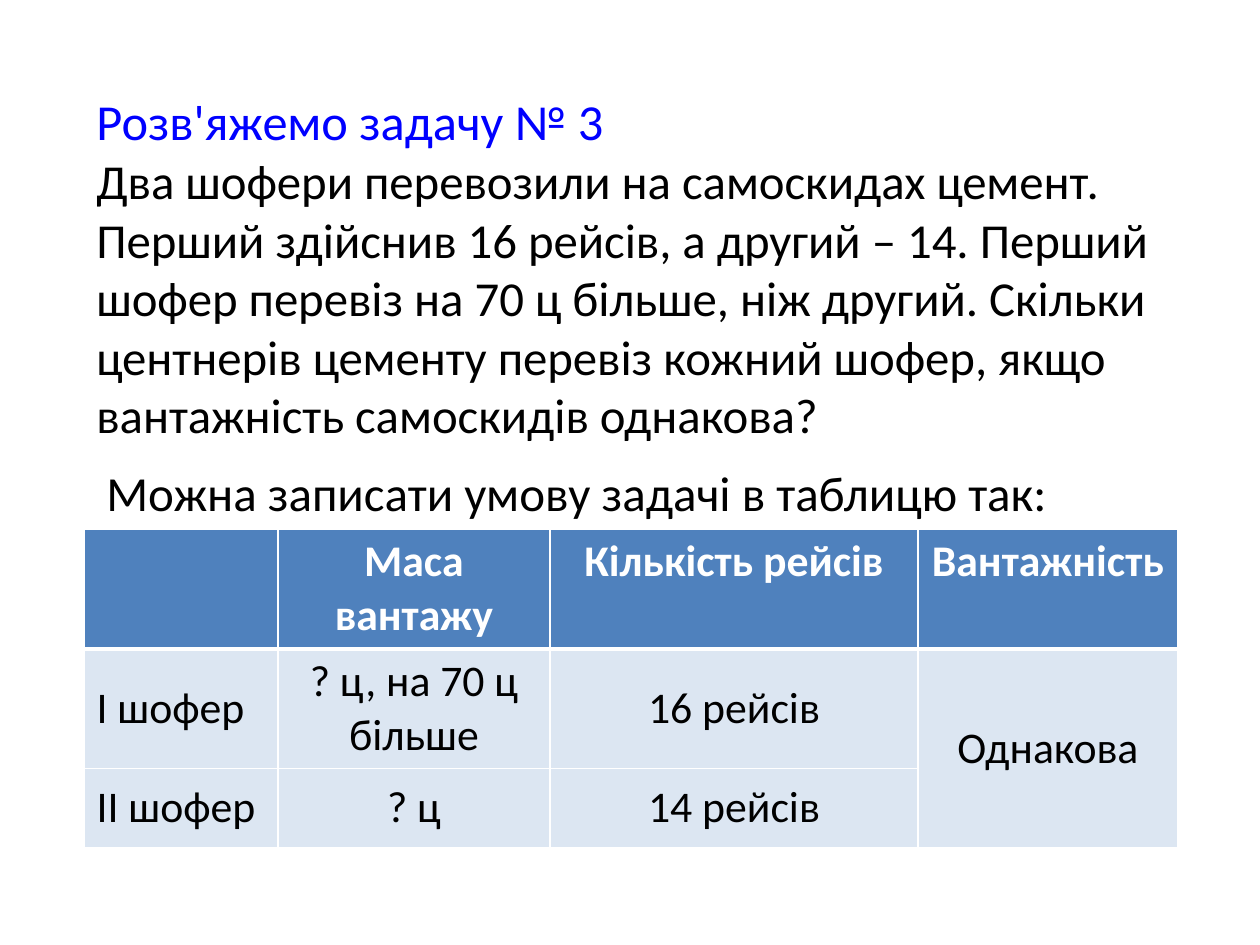
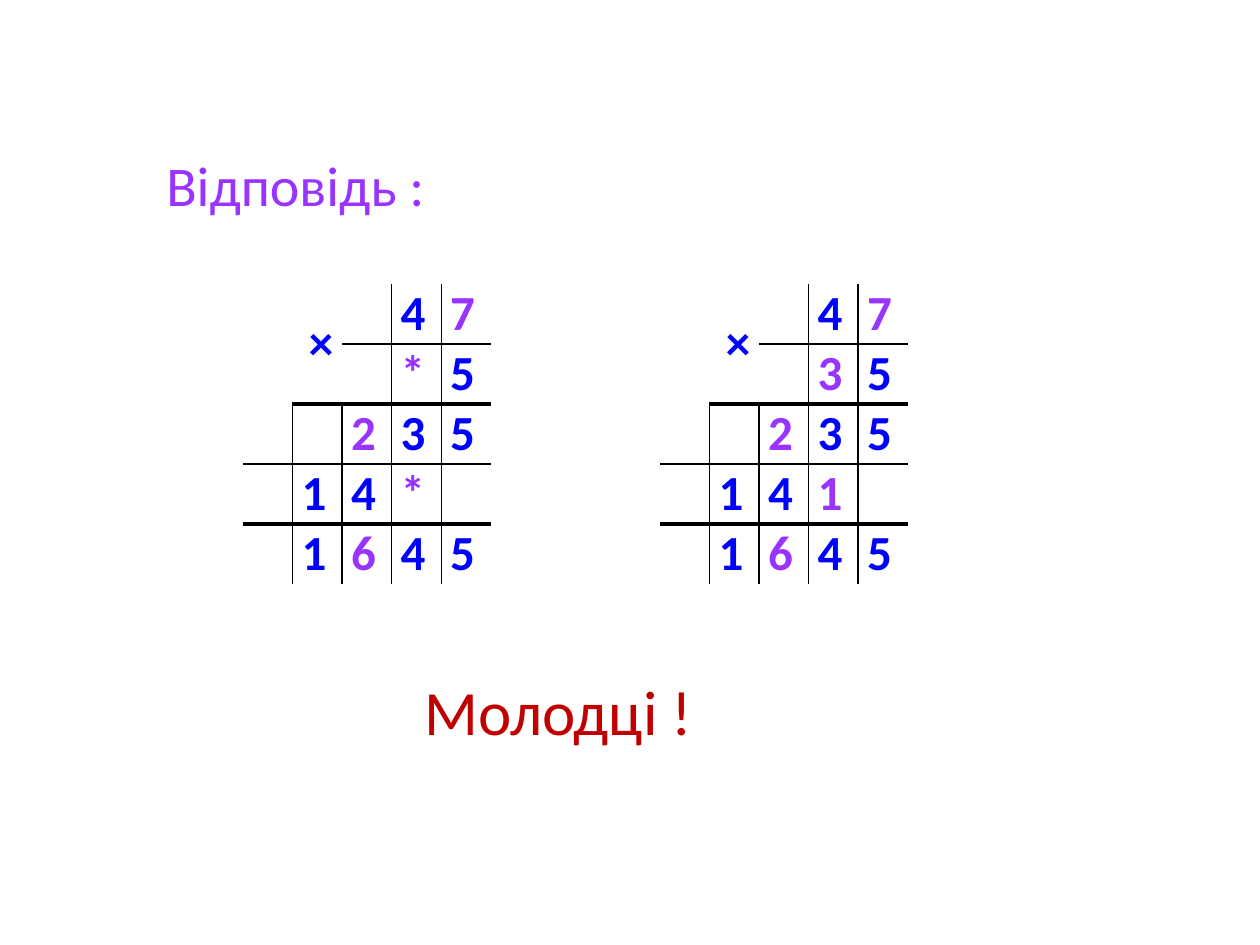
from pptx import Presentation
from pptx.dml.color import RGBColor
from pptx.enum.shapes import MSO_SHAPE
from pptx.enum.text import MSO_ANCHOR, PP_ALIGN
from pptx.oxml.ns import qn
from pptx.util import Pt
from lxml.etree import SubElement

SCALE = 914400 / 126
FONT = "Calibri"
BLUE, VIOLET, RED = "0000FF", "9933FF", "C00000"
BLACK, WHITE, HEADER, PALE = "000000", "FFFFFF", "4F81BD", "DCE6F2"
CONDITION = [
    ["", "Маса вантажу", "Кількість рейсів", "Вантажність"],
    ["І шофер", "? ц, на 70 ц більше", "16 рейсів", "Однакова"],
    ["ІІ шофер", "? ц", "14 рейсів", ""],
]
HIDDEN_DIGITS = {(0, 4), (1, 3), (2, 2), (3, 3), (4, 2)}
RULES = [(2, 1), (1, 2.25), (0, 1), (0, 2.25)]


def emu(px):
    return round(px * SCALE)


def color(value):
    return RGBColor.from_string(value)


def apply(target, values):
    for name, value in values.items():
        setattr(target, name, value)


def paint(target, value):
    target.fill.solid()
    target.fill.fore_color.rgb = color(value)


def add_span(para, text, size, fill, bold=False):
    span = para.add_run()
    span.text = text
    apply(span.font, {"size": Pt(size), "name": FONT, "bold": bold})
    span.font.color.rgb = color(fill)


def fill_text(box, pieces):
    apply(box.text_frame, {
        "word_wrap": True, "vertical_anchor": MSO_ANCHOR.MIDDLE})
    para = box.text_frame.paragraphs[0]
    para.alignment = PP_ALIGN.LEFT
    for index, piece in enumerate(pieces):
        if index:
            para.add_line_break()
        add_span(para, *piece)


def add_text(page, bounds, pieces):
    fill_text(page.shapes.add_textbox(*map(emu, bounds)), pieces)


def add_panel(page, bounds, pieces):
    panel = page.shapes.add_shape(MSO_SHAPE.RECTANGLE, *map(emu, bounds))
    panel.shadow.inherit = False
    panel.line.fill.background()
    paint(panel, WHITE)
    fill_text(panel, pieces)


def set_borders(cell, widths, line_color):
    properties = cell._tc.get_or_add_tcPr()
    for side in "LRTB":
        width = widths.get(side, 0)
        line = SubElement(properties, qn(f"a:ln{side}"), w=str(Pt(width)))
        if width:
            fill = SubElement(line, qn("a:solidFill"))
            SubElement(fill, qn("a:srgbClr"), val=line_color)
        else:
            SubElement(line, qn("a:noFill"))


def add_grid(page, left, top, widths, heights):
    frame = page.shapes.add_table(
        len(heights), len(widths), emu(left), emu(top),
        sum(widths), sum(heights))
    table = frame.table
    apply(table, {"first_row": False, "horz_banding": False})
    for column, width in zip(table.columns, widths):
        column.width = width
    for row, height in zip(table.rows, heights):
        row.height = height
    return table


def add_condition_table(page, left, top):
    widths = [emu(px) for px in (194, 272, 368, 260)]
    heights = [emu(px) for px in (120, 119, 79)]
    table = add_grid(page, left, top, widths, heights)
    for row, texts in enumerate(CONDITION):
        heading = row == 0
        for column, text in enumerate(texts):
            cell = table.cell(row, column)
            edges = {"L": 1, "R": 1, "T": 3 if row == 1 else 1, "B": 3 if heading else 1}
            set_borders(cell, edges, WHITE)
            paint(cell, HEADER if heading else PALE)
            cell.vertical_anchor = MSO_ANCHOR.TOP if heading else MSO_ANCHOR.MIDDLE
            if text:
                para = cell.text_frame.paragraphs[0]
                para.alignment = PP_ALIGN.CENTER if column else PP_ALIGN.LEFT
                add_span(para, text, 25, WHITE if heading else BLACK, heading)
    table.cell(1, 3).merge(table.cell(2, 3))


def right_edge(row, column):
    return 1 if 0 <= column < 4 and (column >= 2 or row >= 2) else 0


def bottom_edge(row, column):
    if not 0 <= row < len(RULES):
        return 0
    start, width = RULES[row]
    return width if column >= start else 0


def add_multiplication(page, left, top, lines):
    table = add_grid(page, left, top, [emu(248) // 5] * 5, [emu(60)] * 5)
    for row, line in enumerate(lines):
        for column, digit in enumerate(line):
            cell = table.cell(row, column)
            set_borders(cell, {
                "L": right_edge(row, column - 1), "R": right_edge(row, column),
                "T": bottom_edge(row - 1, column), "B": bottom_edge(row, column),
            }, BLACK)
            cell.fill.background()
            apply(cell, {"margin_left": emu(9), "margin_right": emu(9),
                         "margin_top": 0, "margin_bottom": 0})
            if digit != " ":
                shade = VIOLET if (row, column) in HIDDEN_DIGITS else BLUE
                para = cell.text_frame.paragraphs[0]
                add_span(para, digit, 28, shade, True)
                if digit == "×":
                    para.alignment = PP_ALIGN.RIGHT
                    cell.vertical_anchor = MSO_ANCHOR.MIDDLE
    for column in (0, 1):
        table.cell(0, column).merge(table.cell(1, column))


def build_problem(page):
    add_panel(page, (84, 92, 1094, 350), [
        ("Розв'яжемо задачу № 3", 28.8, BLUE),
        ("Два шофери перевозили на самоскидах цемент. Перший здійснив "
         "16 рейсів, а другий – 14. Перший шофер перевіз на 70 ц більше, "
         "ніж другий. Скільки центнерів цементу перевіз кожний шофер, "
         "якщо вантажність самоскидів однакова?", 27.9, BLACK),
    ])
    add_panel(page, (94, 462, 1084, 59), [
        ("Можна записати умову задачі в таблицю так:", 28, BLACK),
    ])
    add_condition_table(page, 84, 529)


def build_answer(page):
    add_text(page, (154, 106, 784, 157), [("Відповідь :", 32, VIOLET)])
    for left, second, fourth in ((243, "*", "*"), (660, "3", "1")):
        add_multiplication(page, left, 284, [
            " × 47", f"   {second}5", "  235", f" 14{fourth} ", " 1645"])
    add_text(page, (412, 631, 496, 158), [("Молодці !", 36, RED)])


def main():
    deck = Presentation()
    apply(deck, {"slide_width": emu(1260), "slide_height": emu(945)})
    for build in (build_problem, build_answer):
        build(deck.slides.add_slide(deck.slide_layouts[6]))
    deck.save("out.pptx")


if __name__ == "__main__":
    main()
